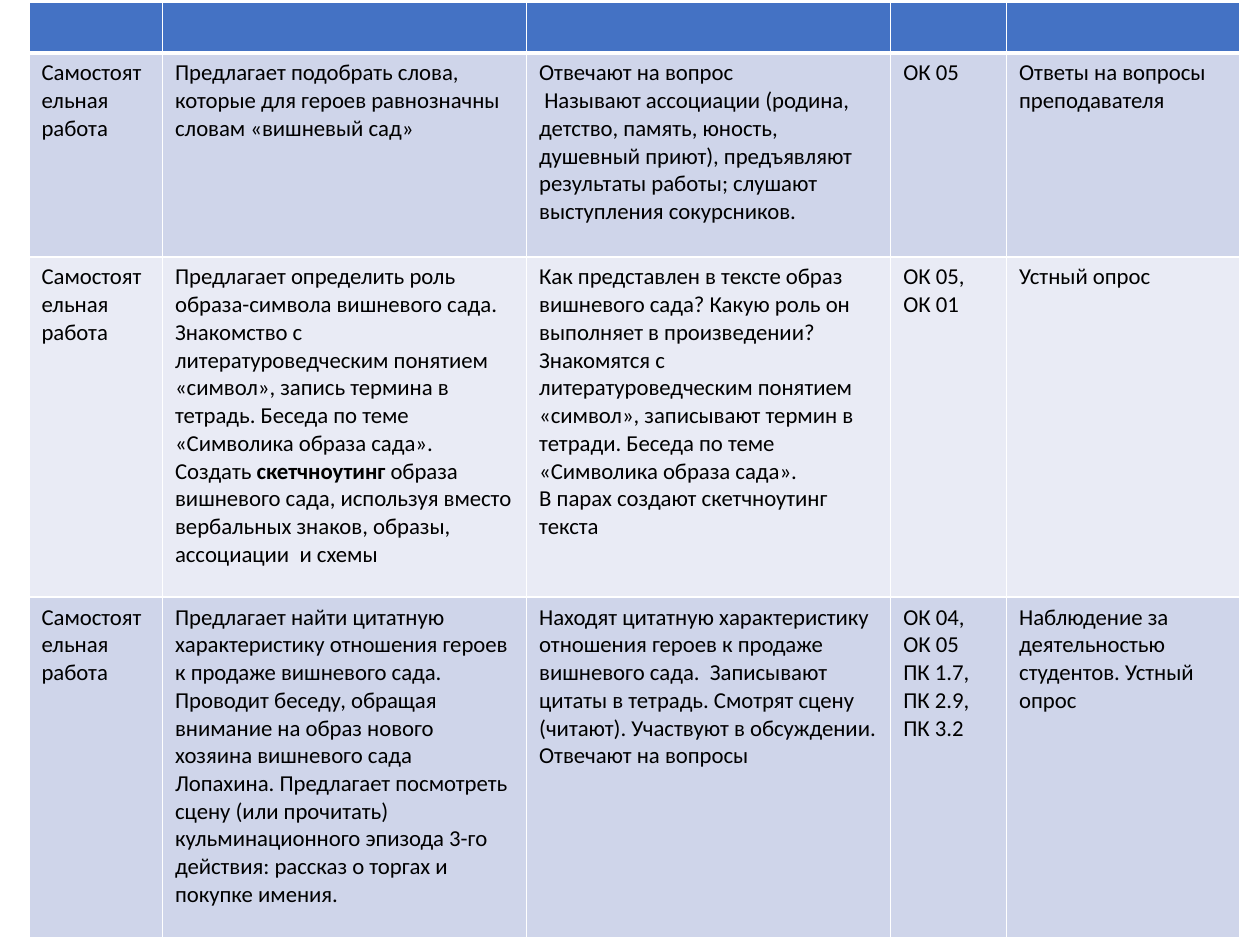
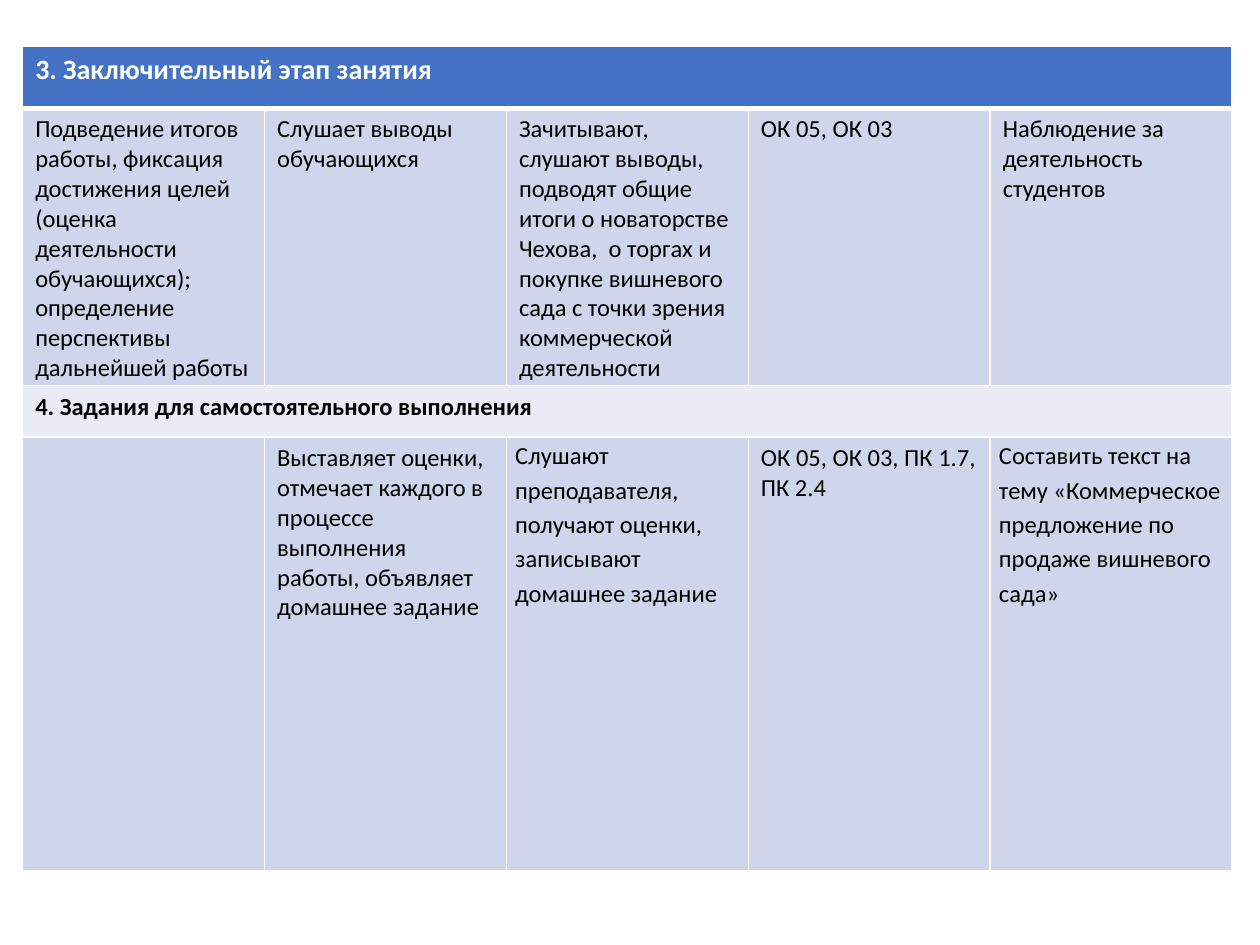
from pptx import Presentation
from pptx import util as u
from pptx.dml.color import RGBColor
from pptx.oxml import parse_xml
from pptx.oxml.ns import nsdecls

COLORS = {"head": "4472C4", "dark": "CFD5EA", "light": "E9EBF5",
          "text": "000000", "white": "FFFFFF"}
FONT = "Calibri"
WORK = "Самостоятельная работа"

STAGES = [
    [""] * 5,
    [WORK,
     "Предлагает подобрать слова, которые для героев равнозначны словам «вишневый сад»",
     "Отвечают на вопрос\n Называют ассоциации (родина, детство, память, юность, душевный приют), "
     "предъявляют результаты работы; слушают выступления сокурсников.",
     "ОК 05",
     "Ответы на вопросы преподавателя"],
    [WORK,
     "Предлагает определить роль образа-символа вишневого сада. Знакомство с литературоведческим "
     "понятием «символ», запись термина в тетрадь. Беседа по теме «Символика образа сада».\n"
     "Создать *скетчноутинг* образа вишневого сада, используя вместо вербальных знаков, образы, "
     "ассоциации  и схемы",
     "Как представлен в тексте образ вишневого сада? Какую роль он выполняет в произведении? "
     "Знакомятся с литературоведческим понятием «символ», записывают термин в тетради. "
     "Беседа по теме «Символика образа сада».\nВ парах создают скетчноутинг текста",
     "ОК 05, ОК 01",
     "Устный опрос"],
    [WORK,
     "Предлагает найти цитатную характеристику отношения героев к продаже вишневого сада. "
     "Проводит беседу, обращая внимание на образ нового хозяина вишневого сада Лопахина. "
     "Предлагает посмотреть сцену (или прочитать) кульминационного эпизода 3-го действия: "
     "рассказ о торгах и покупке имения.",
     "Находят цитатную характеристику отношения героев к продаже вишневого сада.  Записывают "
     "цитаты в тетрадь. Смотрят сцену (читают). Участвуют в обсуждении. Отвечают на вопросы",
     "ОК 04, ОК 05\nПК 1.7, ПК 2.9, ПК 3.2",
     "Наблюдение за деятельностью студентов. Устный опрос"],
]

FINALE = [
    ["*3. Заключительный этап занятия*"],
    ["Подведение итогов работы, фиксация достижения целей (оценка деятельности обучающихся); "
     "определение перспективы дальнейшей работы",
     "Слушает выводы обучающихся",
     "Зачитывают, слушают выводы, подводят общие итоги о новаторстве Чехова,  о торгах и покупке "
     "вишневого сада с точки зрения коммерческой деятельности",
     "ОК 05, ОК 03",
     "Наблюдение за деятельность студентов"],
    ["*4. Задания для самостоятельного выполнения*"],
    ["",
     "Выставляет оценки, отмечает каждого в процессе выполнения работы, объявляет домашнее задание",
     "Слушают преподавателя, получают оценки, записывают домашнее задание",
     "ОК 05, ОК 03, ПК 1.7, ПК 2.4",
     "Составить текст на тему «Коммерческое предложение по продаже вишневого сада»"],
]


def rgb(name):
    return RGBColor.from_string(COLORS[name])


def edge(cell, head):
    props = cell._tc.get_or_add_tcPr()
    for side in "LRTB":
        width = u.Pt(3 if head and side == "B" else 1)
        props.append(parse_xml(
            f'<a:ln{side} {nsdecls("a")} w="{width}"><a:solidFill>'
            f'<a:srgbClr val="{COLORS["white"]}"/></a:solidFill></a:ln{side}>'))


def write(cell, words, size, color):
    frame = cell.text_frame
    frame.text = words.replace("*", "")
    for para, line in zip(frame.paragraphs, words.split("\n")):
        para.text = ""
        for i, part in enumerate(line.split("*")):
            if part:
                run = para.add_run()
                run.text = part
                run.font.name = FONT
                run.font.size = u.Pt(size)
                run.font.bold = i % 2 == 1
                run.font.color.rgb = rgb(color)


def paint(cell, row):
    edge(cell, row == 0)
    cell.fill.solid()
    cell.fill.fore_color.rgb = rgb("head" if row == 0 else "dark" if row % 2 else "light")
    cell.margin_left = cell.margin_right = u.Inches(0.1)
    cell.margin_top = u.Inches(0.05)
    cell.margin_bottom = 0


def space(cell):
    cell.margin_left = cell.margin_right = u.Inches(0.07)
    cell.margin_top = 0
    for para in cell.text_frame.paragraphs:
        para.line_spacing = 1.15


def grid(deck, data, left, top, cols, rows, size):
    slide = deck.slides.add_slide(deck.slide_layouts[6])
    frame = slide.shapes.add_table(len(rows), len(cols), u.Inches(left), u.Inches(top),
                                   u.Inches(sum(cols)), u.Inches(sum(rows)))
    table = frame.table
    for col, width in zip(table.columns, cols):
        col.width = u.Inches(width)
    for r, (line, height) in enumerate(zip(data, rows)):
        table.rows[r].height = u.Inches(height)
        for c in range(len(cols)):
            paint(table.cell(r, c), r)
        if len(line) == 1:
            table.cell(r, 0).merge(table.cell(r, len(cols) - 1))
        for c, words in enumerate(line):
            if words:
                write(table.cell(r, c), words, 16 if r == 0 else size,
                      "text" if r else "white")
    return table


def main():
    deck = Presentation()
    deck.slide_width, deck.slide_height = u.Inches(10), u.Inches(7.5)
    grid(deck, STAGES, 0.23, 0.02, [1.06, 2.89, 2.89, 0.92, 1.85],
         [0.4, 1.62, 2.7, 2.7], 13)
    table = grid(deck, FINALE, 0.18, 0.37, [1.92] * 5, [0.49, 2.2, 0.41, 3.44], 14)
    for col in (2, 4):
        space(table.cell(3, col))
    deck.save("out.pptx")


if __name__ == "__main__":
    main()
